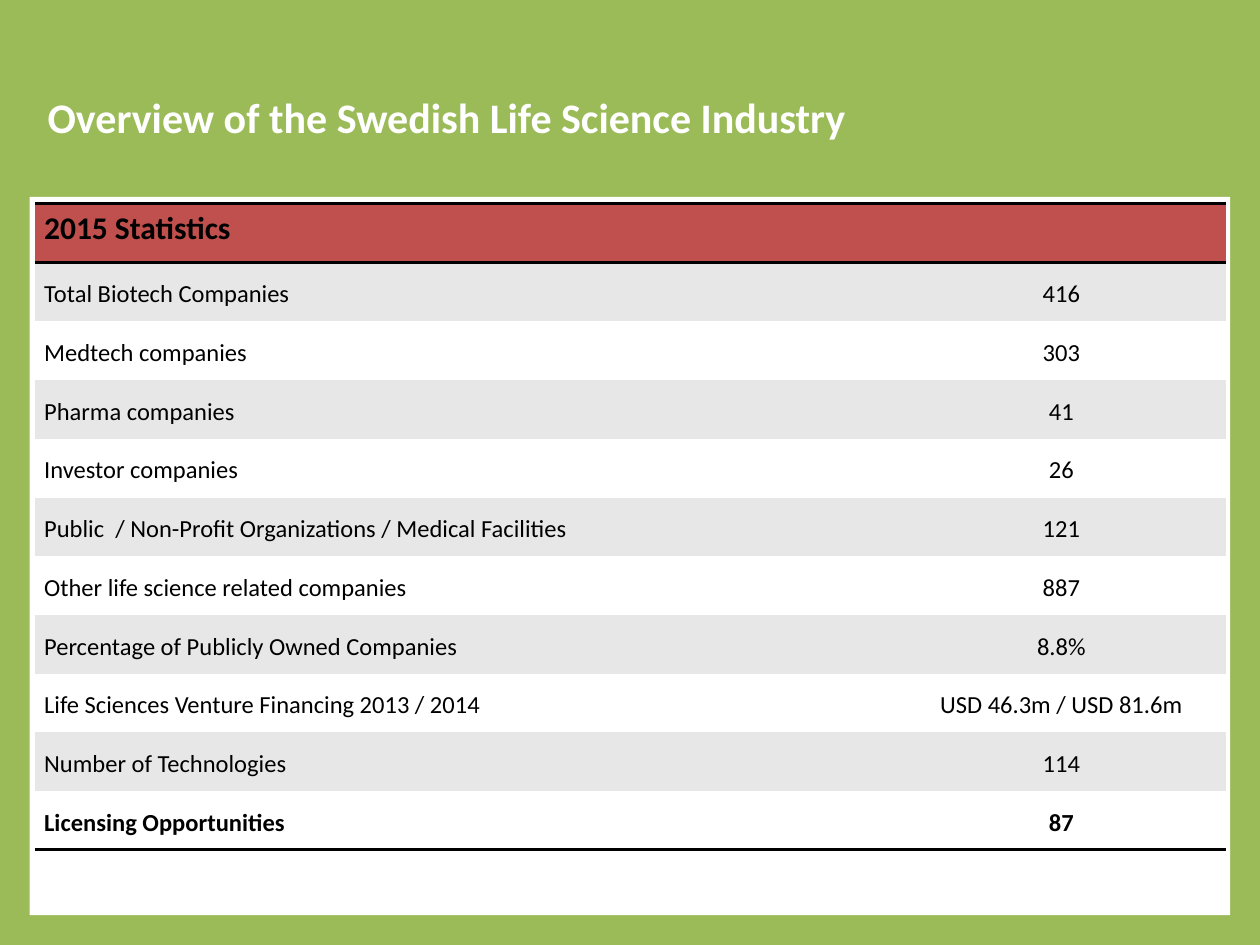
from lxml import etree
from pptx import Presentation
from pptx.dml.color import RGBColor
from pptx.enum.shapes import MSO_SHAPE
from pptx.enum.text import MSO_ANCHOR, PP_ALIGN
from pptx.oxml.ns import qn
from pptx.util import Cm, Pt

RECTANGLE = MSO_SHAPE.RECTANGLE
TOP, MIDDLE = MSO_ANCHOR.TOP, MSO_ANCHOR.MIDDLE
LEFT, CENTER = PP_ALIGN.LEFT, PP_ALIGN.CENTER

FONT = "Calibri"
GREEN, RED, GREY, WHITE, BLACK = "9BBB59", "C0504D", "E7E7E7", "FFFFFF", "000000"
PLAIN_TABLE_STYLE = "{2D5ABB26-0587-4C30-8999-92F81FD0307C}"

HEADING = "2015 Statistics"
STATISTICS = [
    ("Total Biotech Companies", "416"),
    ("Medtech companies", "303"),
    ("Pharma companies", "41"),
    ("Investor companies", "26"),
    ("Public  / Non-Profit Organizations / Medical Facilities", "121"),
    ("Other life science related companies", "887"),
    ("Percentage of Publicly Owned Companies", "8.8%"),
    ("Life Sciences Venture Financing 2013 / 2014", "USD 46.3m / USD 81.6m"),
    ("Number of Technologies", "114"),
    ("Licensing Opportunities", "87"),
]


def color(hex_value):
    """Turn a hex string into a colour."""
    return RGBColor.from_string(hex_value)


def format_runs(paragraph, size, hex_value, bold):
    """Give every run of a paragraph the same font."""
    for run in paragraph.runs:
        run.font.name = FONT
        run.font.size = Pt(size)
        run.font.bold = bold
        run.font.color.rgb = color(hex_value)


def add_title(slide, left, top, width, height):
    """Place the slide title, centred vertically in its box."""
    title = slide.shapes.add_textbox(left, top, width, height).text_frame
    title.word_wrap = True
    title.vertical_anchor = MIDDLE
    title.text = "Overview of the Swedish Life Science Industry"
    format_runs(title.paragraphs[0], 24, WHITE, True)


def add_panel(slide, left, top, width, height):
    """Place the white panel behind the table."""
    panel = slide.shapes.add_shape(RECTANGLE, left, top, width, height)
    panel.shadow.inherit = False
    panel.fill.solid()
    panel.fill.fore_color.rgb = color(WHITE)
    panel.line.fill.background()


def add_rules(cell, *sides):
    """Draw 2 pt black rules on the given cell sides, in schema order."""
    properties = cell._tc.get_or_add_tcPr()
    for position, side in enumerate(sides):
        rule = etree.Element(qn(f"a:ln{side}"), w=str(Pt(2)))
        fill = etree.SubElement(rule, qn("a:solidFill"))
        etree.SubElement(fill, qn("a:srgbClr"), val=BLACK)
        properties.insert(position, rule)


def fill_cell(cell, text, fill, size=14, bold=False, align=LEFT, anchor=MIDDLE):
    """Set the text, fill and layout of one table cell."""
    cell.fill.solid()
    cell.fill.fore_color.rgb = color(fill)
    cell.margin_left = cell.margin_right = Cm(0.18)
    cell.margin_top = cell.margin_bottom = 0
    cell.vertical_anchor = anchor
    cell.text_frame.text = text
    paragraph = cell.text_frame.paragraphs[0]
    paragraph.alignment = align
    paragraph.line_spacing = 1.15
    format_runs(paragraph, size, BLACK, bold)


def add_statistics(slide, left, top, width, height):
    """Place the statistics table with a merged heading row."""
    row_count = len(STATISTICS) + 1
    table = slide.shapes.add_table(row_count, 2, left, top, width, height).table
    table._tbl.tblPr.find(qn("a:tableStyleId")).text = PLAIN_TABLE_STYLE
    value_width = Cm(6.63)
    table.columns[0].width = width - value_width
    table.columns[1].width = value_width
    for row in table.rows:
        row.height = height // row_count

    heading, heading_end = table.cell(0, 0), table.cell(0, 1)
    heading.merge(heading_end)
    fill_cell(heading, HEADING, RED, size=18, bold=True, anchor=TOP)
    for cell in (heading, heading_end):
        add_rules(cell, "T", "B")

    last = len(STATISTICS)
    for index, (label, value) in enumerate(STATISTICS, start=1):
        fill = GREY if index % 2 else WHITE
        for column, (text, align) in enumerate(((label, LEFT), (value, CENTER))):
            cell = table.cell(index, column)
            fill_cell(cell, text, fill, bold=index == last, align=align)
            if index == last:
                add_rules(cell, "B")


def main():
    """Build and save the slide."""
    presentation = Presentation()
    presentation.slide_width, presentation.slide_height = Cm(25.4), Cm(19.05)
    slide = presentation.slides.add_slide(presentation.slide_layouts[6])
    slide.background.fill.solid()
    slide.background.fill.fore_color.rgb = color(GREEN)
    add_panel(slide, Cm(0.6), Cm(3.97), Cm(24.2), Cm(14.48))
    add_title(slide, Cm(0.71), Cm(0.76), Cm(22.86), Cm(3.18))
    add_statistics(slide, Cm(0.71), Cm(4.11), Cm(24), Cm(13.03))
    presentation.save("out.pptx")


if __name__ == "__main__":
    main()
